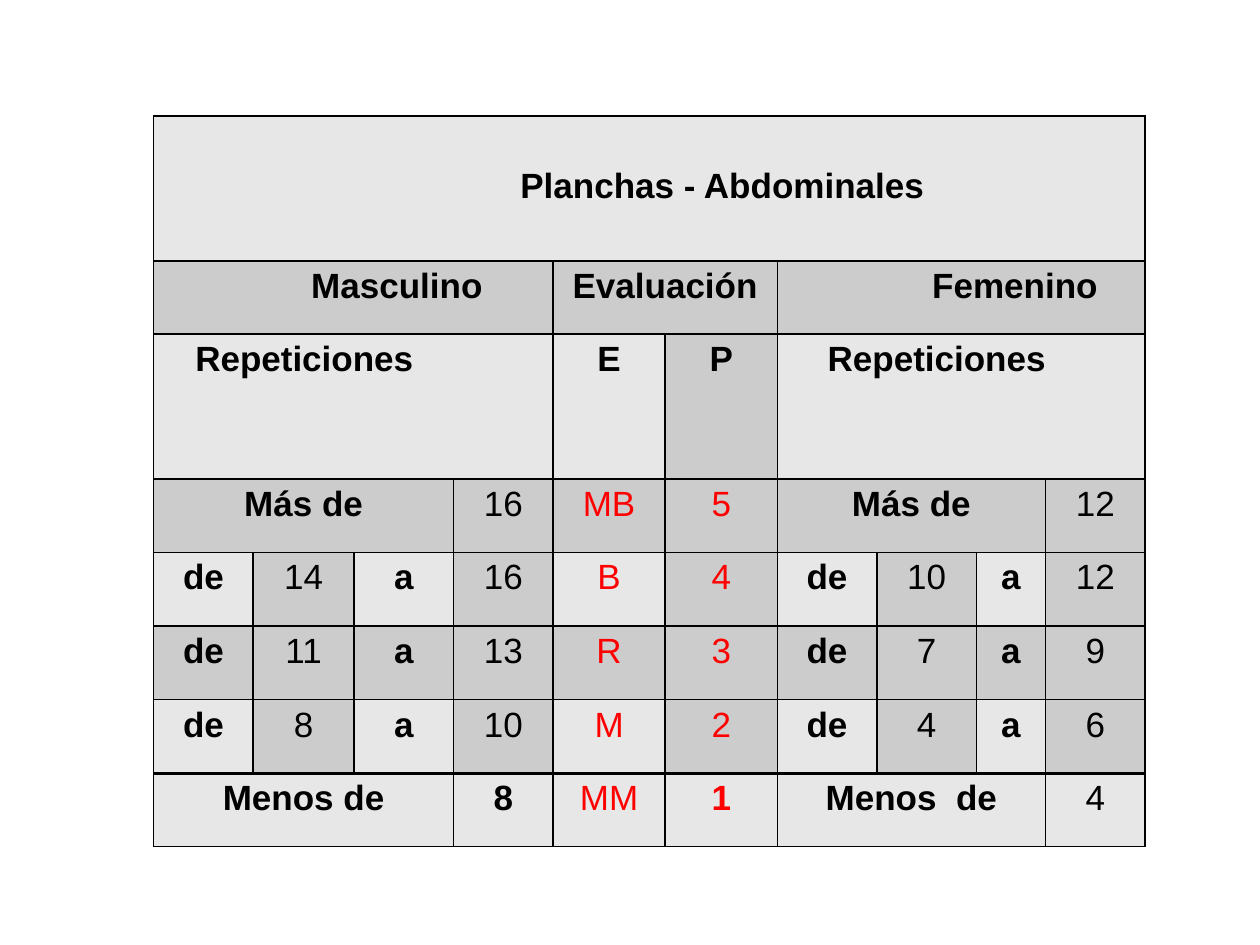
from lxml import etree
from pptx import Presentation
from pptx.dml.color import RGBColor
from pptx.enum.text import PP_ALIGN as ALIGN
from pptx.oxml.ns import qn
from pptx.util import Inches, Pt

BLACK = RGBColor(0x00, 0x00, 0x00)
RED = RGBColor(0xFF, 0x00, 0x00)
LIGHT = RGBColor(0xE7, 0xE7, 0xE7)
DARK = RGBColor(0xCC, 0xCC, 0xCC)

COL_WIDTHS = [0.79, 0.8, 0.79, 0.79, 0.89, 0.89, 0.79, 0.79, 0.55, 0.79]
# Three heading rows, then five score rows that share 2.92 inches
ROW_HEIGHTS = [1.15, 0.58, 1.15] + [2.92 / 5] * 5
LAST_ROW = len(ROW_HEIGHTS) - 1

# None marks a place covered by the merged cell on its left
ROWS = [
    ["Planchas - Abdominales"] + [None] * 9,
    ["Masculino", None, None, None, "Evaluación", None,
     "Femenino", None, None, None],
    ["Repeticiones", None, None, None, "E", "P",
     "Repeticiones", None, None, None],
    ["Más de", None, None, "16", "MB", "5", "Más de", None, None, "12"],
    ["de", "14", "a", "16", "B", "4", "de", "10", "a", "12"],
    ["de", "11", "a", "13", "R", "3", "de", "7", "a", "9"],
    ["de", "8", "a", "10", "M", "2", "de", "4", "a", "6"],
    ["Menos de", None, None, "8", "MM", "1", "Menos  de", None, None, "4"],
]
# Left-aligned headings, indented from the cell's edge
INDENTS = {(0, 0): 2.84, (1, 0): 1.18, (1, 6): 1.16,
           (2, 0): 0.26, (2, 6): 0.33}
BOLD_NUMBERS = {(LAST_ROW, 3), (LAST_ROW, 5)}


class TableSlide:
    font, size, margin = "Arial", Pt(20), Inches(0.07)

    def __init__(self, prs):
        self.slide = prs.slides.add_slide(prs.slide_layouts[6])

    def table(self, left, top, widths, heights):
        frame = self.slide.shapes.add_table(
            len(heights), len(widths), Inches(left), Inches(top),
            Inches(sum(widths)), Inches(sum(heights)))
        table = frame.table
        for col, width in zip(table.columns, widths):
            col.width = Inches(width)
        for row, height in zip(table.rows, heights):
            row.height = Inches(height)
        return table

    def box(self, cell, color, top=1, bottom=1):
        cell.margin_left = cell.margin_right = self.margin
        cell.margin_top = cell.margin_bottom = 0
        cell.fill.solid()
        cell.fill.fore_color.rgb = color
        props = cell._tc.get_or_add_tcPr()
        sides = [("lnL", 1), ("lnR", 1), ("lnT", top), ("lnB", bottom)]
        for i, (side, width) in enumerate(sides):
            ln = etree.Element(qn("a:" + side), w=str(Pt(width)))
            fill = etree.SubElement(ln, qn("a:solidFill"))
            etree.SubElement(fill, qn("a:srgbClr"), val=str(BLACK))
            props.insert(i, ln)

    def text(self, cell, text, color, bold, indent=None):
        p = cell.text_frame.paragraphs[0]
        p.text = text
        p.line_spacing = 1.15
        if indent is None:
            p.alignment = ALIGN.CENTER
        else:
            p.alignment = ALIGN.LEFT
            props = p._p.get_or_add_pPr()
            props.set("marL", str(Inches(indent)))
            props.set("indent", "0")
        font = p.runs[0].font
        font.name, font.size, font.bold = self.font, self.size, bold
        font.color.rgb = color


def cell_fill(row, col):
    if row in (0, LAST_ROW):
        return LIGHT
    return DARK if row % 2 or col % 2 else LIGHT


def main():
    prs = Presentation()
    prs.slide_width, prs.slide_height = Inches(10), Inches(7.5)
    s = TableSlide(prs)
    table = s.table(1.22, 0.92, COL_WIDTHS, ROW_HEIGHTS)

    for r, row in enumerate(ROWS):
        start = 0
        for c, label in enumerate(row):
            # Fill and borders, with a heavier line above the last row
            cell = table.cell(r, c)
            if label is not None:
                start = c
            s.box(cell, cell_fill(r, start),
                  top=2 if r == LAST_ROW else 1,
                  bottom=2 if r == LAST_ROW - 1 else 1)
            if label is None:
                continue

            # Text: marks in red, headings in bold
            is_mark = r > 2 and c in (4, 5)
            bold = (r, c) in BOLD_NUMBERS or not (is_mark or label.isdigit())
            s.text(cell, label, RED if is_mark else BLACK, bold,
                   INDENTS.get((r, c)))

            # Merge over the empty places that follow
            end = c
            while end + 1 < len(row) and row[end + 1] is None:
                end += 1
            if end > c:
                cell.merge(table.cell(r, end))

    # The title sits lower in its row
    table.cell(0, 0).margin_top = Inches(0.36)
    prs.save("out.pptx")


if __name__ == "__main__":
    main()
